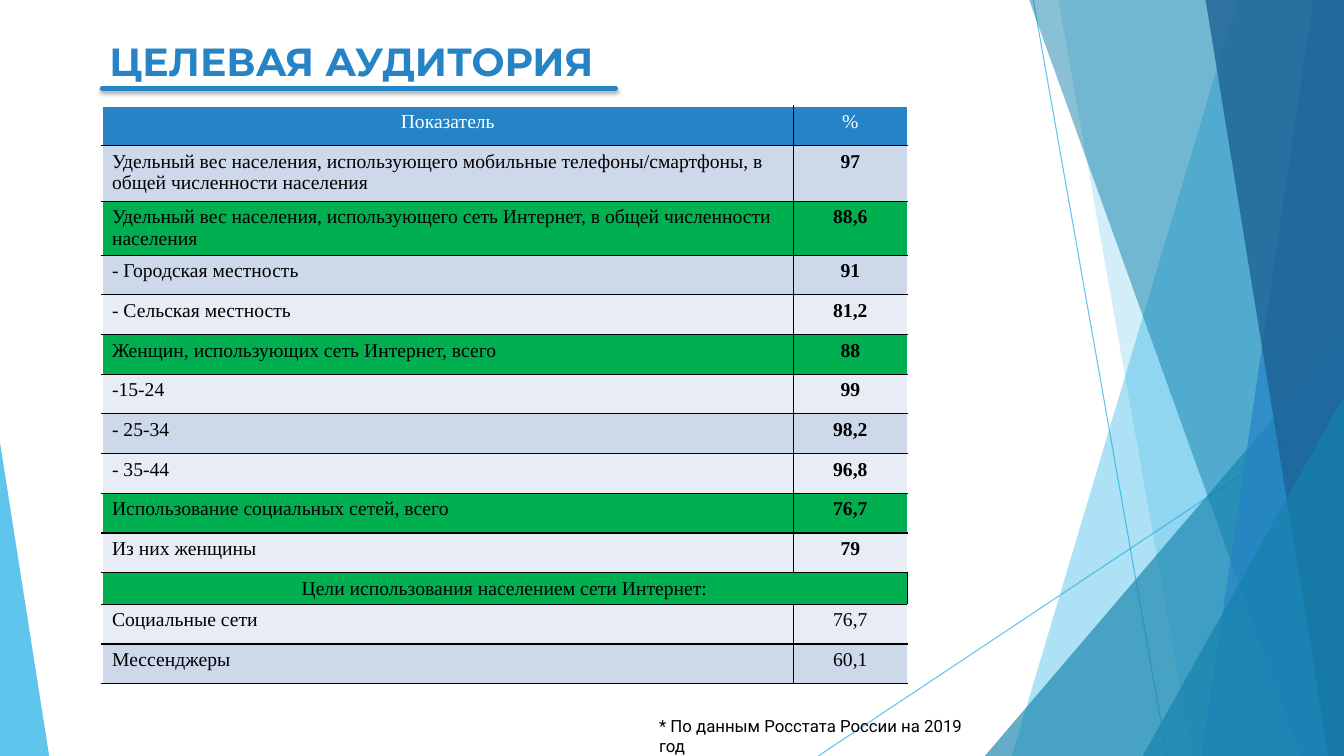
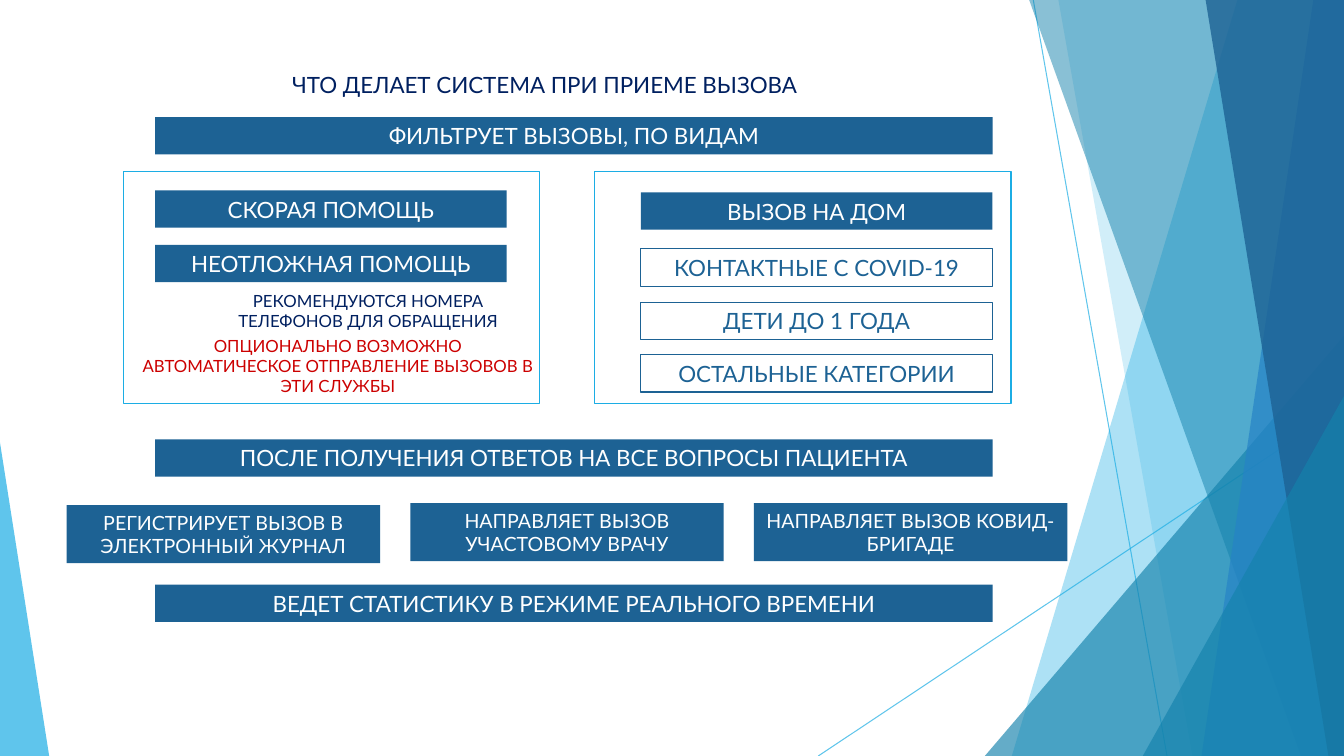
from lxml import etree
from pptx import Presentation
from pptx import util as u
from pptx.dml.color import RGBColor
from pptx.enum import shapes, text
from pptx.oxml import ns

Cm, Pt = u.Cm, u.Pt
CYAN = RGBColor(0x1C, 0xAD, 0xE4)
TEAL = RGBColor(0x14, 0x82, 0xAC)
BLUE = RGBColor(0x26, 0x83, 0xC6)
DEEP_BLUE = RGBColor(0x1D, 0x62, 0x94)
NAVY = RGBColor(0x00, 0x20, 0x60)
RED = RGBColor(0xCC, 0x00, 0x00)
GREEN = RGBColor(0x00, 0xB0, 0x50)
BAND_DARK = RGBColor(0xCD, 0xD9, 0xEA)
BAND_LIGHT = RGBColor(0xE8, 0xED, 0xF5)
WHITE = RGBColor(0xFF, 0xFF, 0xFF)
BLACK = RGBColor(0x00, 0x00, 0x00)
WIDTH, HEIGHT = 33.87, 19.05

RAYS = [((26.04, 0), (29.41, HEIGHT)), ((WIDTH, 10.24), (20.62, HEIGHT))]
FACETS = [
    ("band", (31.19, 25.5), CYAN, 36),
    ("band", (26.67, 30.05), CYAN, 20),
    ("triangle", (24.82, 8.46, 9.05, 1), TEAL, 66),
    ("band", (25.93, 32.79), TEAL, 50),
    ("band", (33.1, 30.28), BLUE, 70),
    ("band", (30.38, 33.48), DEEP_BLUE, 80),
    ("triangle", (28.8, 9.98, 5.07, 1), TEAL, 66),
    ("triangle", (0, 11.15, 1.24, 0), CYAN, 70),
]

AUDIENCE_TITLE = "ЦЕЛЕВАЯ АУДИТОРИЯ"
SOURCE_NOTE = "* По данным Росстата России на 2019 год"
AUDIENCE = [
    ("Показатель", "%", "header"),
    ("Удельный вес населения, использующего мобильные телефоны/смартфоны, в общей численности населения", "97", "bold"),
    ("Удельный вес населения, использующего сеть Интернет, в общей численности населения", "88,6", "total"),
    ("- Городская местность", "91", "bold"),
    ("- Сельская местность", "81,2", "bold"),
    ("Женщин, использующих сеть Интернет, всего", "88", "total"),
    ("-15-24", "99", "bold"),
    ("- 25-34", "98,2", "bold"),
    ("- 35-44", "96,8", "bold"),
    ("Использование социальных сетей, всего", "76,7", "total"),
    ("Из них женщины", "79", "bold"),
    ("Цели использования населением сети Интернет:", "", "section"),
    ("Социальные сети", "76,7", "plain"),
    ("Мессенджеры", "60,1", "plain"),
]
ROW_HEIGHT, TALL_ROWS = 1.0, {1: 1.4, 2: 1.36, 11: 0.8}
COLUMN_WIDTHS = (17.43, 2.86)

STYLES = {
    "heading": dict(fill=WHITE, line=None, color=NAVY, size=16),
    "bar": dict(fill=DEEP_BLUE, line=None, color=WHITE, size=16),
    "action": dict(fill=DEEP_BLUE, line=None, color=WHITE, size=14),
    "option": dict(fill=None, line=DEEP_BLUE, color=DEEP_BLUE, size=16),
}
BAR_HEIGHT, ACTION_HEIGHT = 0.94, 1.46
FULL, LEFT, RIGHT = (3.91, 21.11), (3.91, 8.86), (16.15, 8.86)
ACTIONS = [(1.68 + 8.66 * column, 7.9) for column in range(3)]
PANELS = [(3.12, 4.32, 10.49, 5.84), (14.99, 4.32, 10.49, 5.84)]
STEPS = [
    ("heading", (1.68, 24.1), 1.65, ["ЧТО ДЕЛАЕТ СИСТЕМА ПРИ ПРИЕМЕ ВЫЗОВА"]),
    ("bar", FULL, 2.95, ["ФИЛЬТРУЕТ ВЫЗОВЫ, ПО ВИДАМ"]),
    ("bar", LEFT, 4.8, ["СКОРАЯ ПОМОЩЬ"]),
    ("bar", LEFT, 6.17, ["НЕОТЛОЖНАЯ ПОМОЩЬ"]),
    ("bar", RIGHT, 4.85, ["ВЫЗОВ НА ДОМ"]),
    ("option", RIGHT, 6.27, ["КОНТАКТНЫЕ С COVID-19"]),
    ("option", RIGHT, 7.62, ["ДЕТИ ДО 1 ГОДА"]),
    ("option", RIGHT, 8.94, ["ОСТАЛЬНЫЕ КАТЕГОРИИ"]),
    ("bar", FULL, 11.07, ["ПОСЛЕ ПОЛУЧЕНИЯ ОТВЕТОВ НА ВСЕ ВОПРОСЫ ПАЦИЕНТА"]),
    ("action", ACTIONS[0], 12.73, ["РЕГИСТРИРУЕТ ВЫЗОВ В ЭЛЕКТРОННЫЙ ЖУРНАЛ"]),
    ("action", ACTIONS[1], 12.68, ["НАПРАВЛЯЕТ ВЫЗОВ", "УЧАСТОВОМУ ВРАЧУ"]),
    ("action", ACTIONS[2], 12.68, ["НАПРАВЛЯЕТ ВЫЗОВ КОВИД-БРИГАДЕ"]),
    ("bar", FULL, 14.73, ["ВЕДЕТ СТАТИСТИКУ В РЕЖИМЕ РЕАЛЬНОГО ВРЕМЕНИ"]),
]
REMARKS = [
    ((5.61, 7.21, 7.34, 1.27), NAVY, "РЕКОМЕНДУЮТСЯ НОМЕРА ТЕЛЕФОНОВ ДЛЯ ОБРАЩЕНИЯ"),
    ((3.12, 8.33, 10.8, 1.8), RED, "ОПЦИОНАЛЬНО ВОЗМОЖНО АВТОМАТИЧЕСКОЕ ОТПРАВЛЕНИЕ ВЫЗОВОВ В ЭТИ СЛУЖБЫ"),
]


def lengths(values):
    return [Cm(value) for value in values]


def write(frame, lines, color, align=text.PP_ALIGN.CENTER, **font):
    for index, line in enumerate(lines):
        paragraph = frame.add_paragraph() if index else frame.paragraphs[0]
        paragraph.alignment = align
        run = paragraph.add_run()
        run.text = line
        for name, value in font.items():
            setattr(run.font, name, value)
        run.font.color.rgb = color


def set_alpha(fill_owner, percent):
    for color in fill_owner.iter(ns.qn("a:srgbClr")):
        etree.SubElement(color, ns.qn("a:alpha"), val=str(percent * 1000))


def paint(shape, fill=None, line=None):
    shape.shadow.inherit = False
    for target, color in ((shape.fill, fill), (shape.line.fill, line)):
        if color is None:
            target.background()
        else:
            target.solid()
            target.fore_color.rgb = color
    if line is not None:
        shape.line.width = Pt(0.75)


def add_line(parent, start, end, color, width):
    line = parent.add_connector(shapes.MSO_CONNECTOR.STRAIGHT, *lengths(start + end))
    line.line.color.rgb = color
    line.line.width = Pt(width)
    effects = etree.SubElement(line.element.spPr, ns.qn("a:effectLst"))
    return line, effects


def add_text_box(slide, box, lines, color, **font):
    shape = slide.shapes.add_textbox(*lengths(box))
    shape.text_frame.word_wrap = True
    write(shape.text_frame, lines, color, **font)


def decorate_master(slide, master):
    group = slide.shapes.add_group_shape()
    for start, end in RAYS:
        line, _ = add_line(group.shapes, start, end, CYAN, 0.75)
        set_alpha(line.element, 70)
    for kind, place, color, alpha in FACETS:
        if kind == "band":
            top, bottom = place
            builder = group.shapes.build_freeform(Cm(top), Cm(-0.02))
            corners = [(WIDTH, -0.02), (WIDTH, HEIGHT), (bottom, HEIGHT)]
            builder.add_line_segments([lengths(corner) for corner in corners])
            shape = builder.convert_to_shape()
        else:
            left, top, width, apex = place
            box = lengths((left, top, width, HEIGHT - top))
            shape = group.shapes.add_shape(shapes.MSO_SHAPE.ISOSCELES_TRIANGLE, *box)
            shape.adjustments[0] = apex
        paint(shape, color)
        set_alpha(shape.element.spPr, alpha)
    master.shapes.element.append(group.element)


def set_borders(cell, sides):
    properties = cell._tc.get_or_add_tcPr()
    for side in sides:
        line = etree.SubElement(properties, ns.qn("a:ln" + side), w=str(Pt(1)))
        fill = etree.SubElement(line, ns.qn("a:solidFill"))
        etree.SubElement(fill, ns.qn("a:srgbClr"), val=str(BLACK))


def build_audience(slide):
    line, effects = add_line(slide.shapes, (2.57, 2.23), (15.52, 2.23), BLUE, 3)
    line.get_or_add_ln().set("cap", "rnd")
    shadow = etree.SubElement(effects, ns.qn("a:outerShdw"), blurRad=str(Pt(3)),
                              dist=str(Pt(2)), dir="5400000", rotWithShape="0")
    etree.SubElement(shadow, ns.qn("a:srgbClr"), val=str(BLACK))
    set_alpha(shadow, 35)

    heights = [TALL_ROWS.get(row, ROW_HEIGHT) for row in range(len(AUDIENCE))]
    box = lengths((2.57, 2.67, sum(COLUMN_WIDTHS), sum(heights)))
    table = slide.shapes.add_table(len(AUDIENCE), 2, *box).table
    for column, width in zip(table.columns, COLUMN_WIDTHS):
        column.width = Cm(width)
    special = {"header": BLUE, "total": GREEN, "section": GREEN}
    for row, (label, value, kind) in enumerate(AUDIENCE):
        table.rows[row].height = Cm(heights[row])
        if kind == "section":
            table.cell(row, 0).merge(table.cell(row, 1))
        for column, content in enumerate((label, value)):
            cell = table.cell(row, column)
            inner = "R" if column == 0 or kind == "section" else "L"
            set_borders(cell, inner + ("TB" if row else "B"))
            cell.fill.solid()
            cell.fill.fore_color.rgb = special.get(kind, BAND_DARK if row % 2 else BAND_LIGHT)
            centred = column or kind in ("header", "section")
            if content:
                write(cell.text_frame, [content], WHITE if kind == "header" else BLACK,
                      text.PP_ALIGN.CENTER if centred else text.PP_ALIGN.LEFT,
                      name="Times New Roman", size=Pt(14),
                      bold=bool(column and kind in ("bold", "total")))

    add_text_box(slide, (16.36, 17.91, 8.74, 0.76), [SOURCE_NOTE], BLACK,
                 align=text.PP_ALIGN.LEFT, name="Roboto", size=Pt(12))
    add_text_box(slide, (2.51, 0.81, 17.37, 1.45), [AUDIENCE_TITLE], BLUE,
                 align=text.PP_ALIGN.LEFT, name="Montserrat", size=Pt(28), bold=True)


def build_call_flow(slide):
    for box in PANELS:
        panel = slide.shapes.add_shape(shapes.MSO_SHAPE.RECTANGLE, *lengths(box))
        paint(panel, line=CYAN)
    for kind, (left, width), top, lines in STEPS:
        style = STYLES[kind]
        height = ACTION_HEIGHT if kind == "action" else BAR_HEIGHT
        box = lengths((left, top, width, height))
        shape = slide.shapes.add_shape(shapes.MSO_SHAPE.RECTANGLE, *box)
        paint(shape, style["fill"], style["line"])
        frame = shape.text_frame
        frame.word_wrap = True
        frame.vertical_anchor = text.MSO_ANCHOR.MIDDLE
        write(frame, lines, style["color"], name="Lato", size=Pt(style["size"]))
    for box, color, remark in REMARKS:
        add_text_box(slide, box, [remark], color, name="Lato", size=Pt(12))


def main():
    presentation = Presentation()
    presentation.slide_width = Cm(WIDTH)
    presentation.slide_height = Cm(HEIGHT)
    blank = presentation.slide_layouts[6]
    audience, call_flow = [presentation.slides.add_slide(blank) for _ in range(2)]
    decorate_master(audience, presentation.slide_master)
    build_audience(audience)
    build_call_flow(call_flow)
    presentation.save("out.pptx")


if __name__ == "__main__":
    main()
